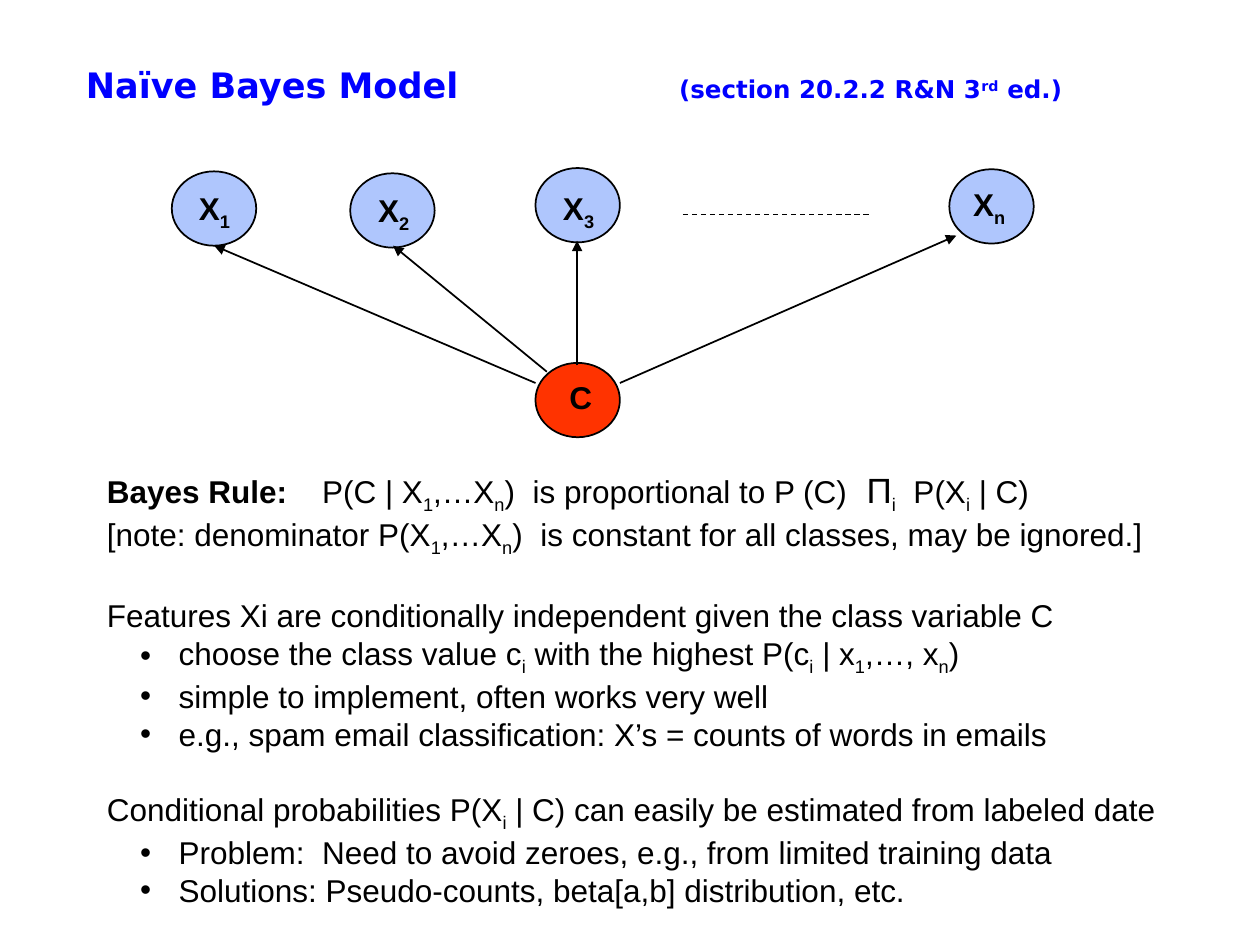
from lxml import etree
from pptx import Presentation
from pptx.dml.color import RGBColor
from pptx.enum.dml import MSO_LINE
from pptx.enum.shapes import MSO_CONNECTOR, MSO_SHAPE
from pptx.enum.text import MSO_ANCHOR, MSO_AUTO_SIZE
from pptx.oxml.ns import qn
from pptx.util import Pt

OVAL = MSO_SHAPE.OVAL
LINE = MSO_CONNECTOR.STRAIGHT
DASH = MSO_LINE.DASH
MIDDLE = MSO_ANCHOR.MIDDLE
GROW = MSO_AUTO_SIZE.SHAPE_TO_FIT_TEXT

BLACK = RGBColor(0, 0, 0)
BLUE = RGBColor(0, 0, 0xFF)
PALE = RGBColor(0x61, 0x8F, 0xFD)
RED = RGBColor(0xFF, 0x33, 0)

# Content: an underscore lowers the next character
TITLE = [
    ("Naïve Bayes Model\t", {"size": 20}),
    ("(section 20.2.2 R&N 3", {}),
    ("rd", {"base": 30}),
    (" ed.)", {}),
]
# Node: label, left, top, label left, label top, label width, fill, alpha
NODES = [
    ("C", 306, 207.36, 318.24, 212.4, 27.4, RED, 100),
    ("X_n", 542.5, 96.7, 549, 102.24, 33.8, PALE, 50),
    ("X_1", 98.2, 97.92, 106.56, 104.4, 33.1, PALE, 50),
    ("X_2", 200.16, 99, 209, 105.84, 33.1, PALE, 50),
    ("X_3", 306, 96, 314.64, 104.4, 33.1, PALE, 50),
]
ARROWS = [
    (306, 218.88, 122.4, 140.4),
    (312.48, 212.4, 224.64, 140.4),
    (329.76, 208.8, 329.76, 137.52),
    (354.24, 218.88, 546.48, 134.64),
]
GAP_LINE = (390.24, 122.4, 498.24, 122.4)
RULE = [
    ("Bayes Rule:\t", {"bold": True}),
    ("P(C | X_1,…X_n)  is proportional to P (C)", {}),
    ("  Π", {"size": 20}),
    ("_i  P(X_i | C)", {}),
]
NOTE = "[note: denominator P(X_1,…X_n)  is constant for all classes, may be ignored.]"
GROUPS = [
    ("Features Xi are conditionally independent given the class variable C", [
        "choose the class value c_i with the highest P(c_i | x_1,…, x_n)",
        "simple to implement, often works very well",
        "e.g., spam email classification: X’s = counts of words in emails",
    ]),
    ("Conditional probabilities P(X_i | C) can easily be estimated from labeled date", [
        "Problem:  Need to avoid zeroes, e.g., from limited training data",
        "Solutions: Pseudo-counts, beta[a,b] distribution, etc.",
    ]),
]
NODE_W, NODE_H = 48.24, 42.5
BLANK = 21.7

deck = Presentation()
deck.slide_width, deck.slide_height = Pt(720), Pt(540)
slide = deck.slides.add_slide(deck.slide_layouts[6])
shapes = slide.shapes


def write(par, text, size=18, bold=False, color=BLACK, font="Arial", base=0):
    head, *tail = text.split("_")
    parts = [(head, base)]
    for part in tail:
        parts += [(part[0], -25), (part[1:], base)]
    for words, shift in parts:
        if not words:
            continue
        run = par.add_run()
        run.text = words
        run.font.size, run.font.bold, run.font.name = Pt(size), bold, font
        run.font.color.rgb = color
        if shift:
            run.font._element.set("baseline", str(shift * 1000))


def add_box(left, top, width, height, wrap=True):
    box = shapes.add_textbox(Pt(left), Pt(top), Pt(width), Pt(height))
    box.text_frame.word_wrap = wrap
    return box.text_frame


def add_tab(par, pos):
    tabs = etree.SubElement(par._p.get_or_add_pPr(), qn("a:tabLst"))
    etree.SubElement(tabs, qn("a:tab"), pos=str(Pt(pos)), algn="l")


def add_line(ends, width=1, arrow=False, dash=None):
    line = shapes.add_connector(LINE, *map(Pt, ends))
    line.line.color.rgb, line.line.width = BLACK, Pt(width)
    if dash:
        line.line.dash_style = dash
    if arrow:
        etree.SubElement(line.line._get_or_add_ln(), qn("a:tailEnd"), type="triangle")
    etree.SubElement(line._element.spPr, qn("a:effectLst"))


# Title
frame = add_box(42, 24.2, 612, 48.24)
frame.vertical_anchor = MIDDLE
par = frame.paragraphs[0]
add_tab(par, 339)
for words, form in TITLE:
    write(par, words, **{"size": 14, "bold": True, "color": BLUE,
                         "font": "DejaVu Sans", **form})

# Network nodes
for label, left, top, *_, fill, alpha in NODES:
    node = shapes.add_shape(OVAL, Pt(left), Pt(top), Pt(NODE_W), Pt(NODE_H))
    node.shadow.inherit = False
    node.fill.solid()
    node.fill.fore_color.rgb = fill
    node.line.color.rgb, node.line.width = BLACK, Pt(1)
    if alpha < 100:
        tint = node._element.spPr.find(qn("a:solidFill"))[0]
        etree.SubElement(tint, qn("a:alpha"), val=str(alpha * 1000))

# Arrows and the dashed gap
for ends in ARROWS:
    add_line(ends, arrow=True)
add_line(GAP_LINE, width=0.75, dash=DASH)

# Node labels
for label, _, _, left, top, width, *_ in NODES:
    frame = add_box(left, top, width, 28.8, wrap=False)
    frame.auto_size = GROW
    write(frame.paragraphs[0], label, bold=True)

# Body text
body = add_box(54, 264.24, 614.88, 249.84)
body.auto_size = GROW

par = body.paragraphs[0]
add_tab(par, 123)
for words, form in RULE:
    write(par, words, **form)
write(body.add_paragraph(), NOTE)
for head, points in GROUPS:
    par = body.add_paragraph()
    par.space_before = Pt(BLANK)
    write(par, head)
    for point in points:
        par = body.add_paragraph()
        par.level = 1
        props = par._p.get_or_add_pPr()
        props.set("marL", str(Pt(41)))
        props.set("indent", str(Pt(-22)))
        etree.SubElement(props, qn("a:buFont"), typeface="Arial")
        etree.SubElement(props, qn("a:buChar"), char="•")
        write(par, point)

deck.save("out.pptx")
